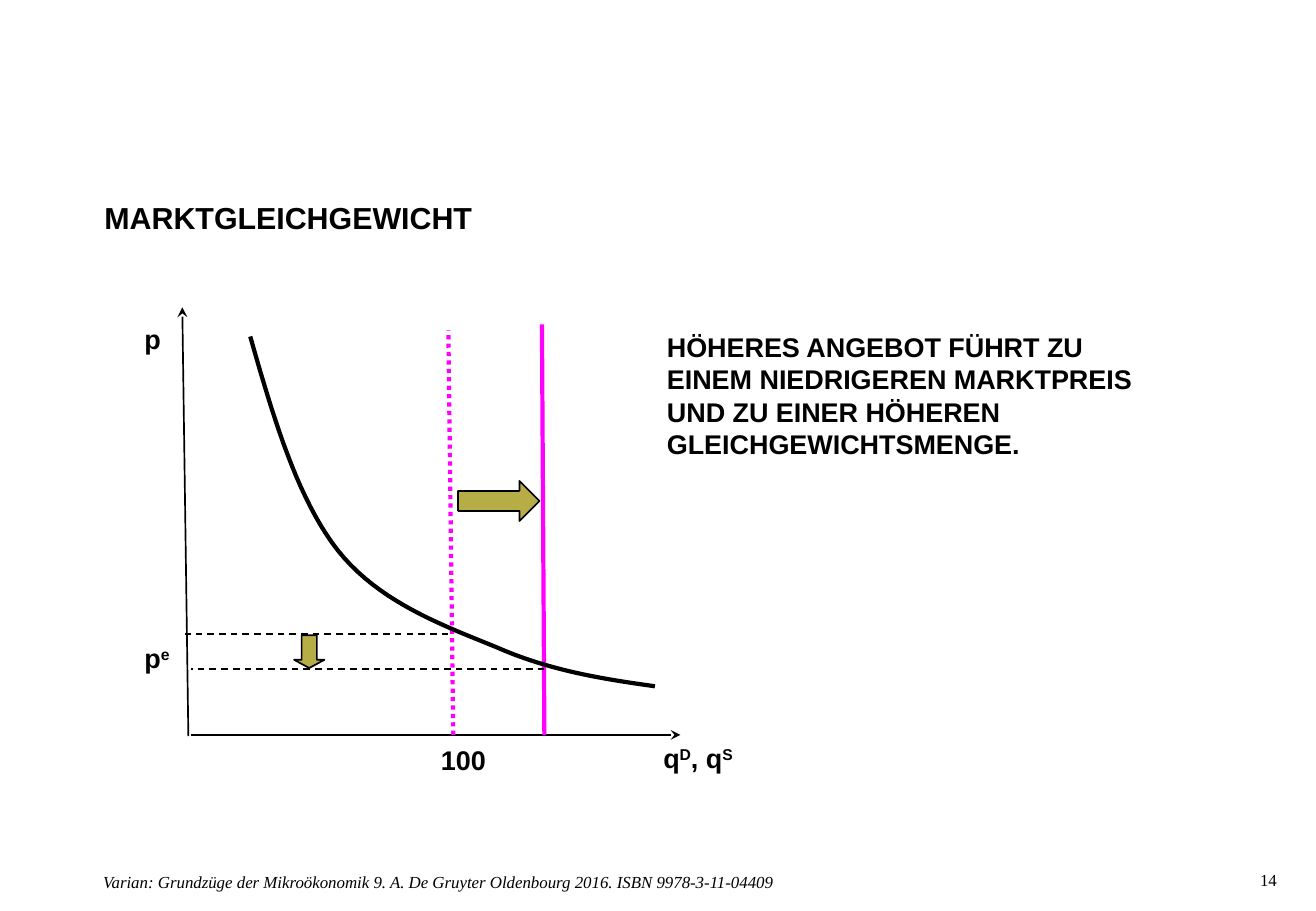
from lxml.etree import SubElement
from pptx import Presentation
from pptx.dml.color import RGBColor
from pptx.enum.dml import MSO_LINE
from pptx.enum.shapes import MSO_CONNECTOR, MSO_SHAPE
from pptx.enum.text import MSO_AUTO_SIZE
from pptx.oxml.ns import qn
from pptx.util import Inches, Pt

BLACK = RGBColor(0x00, 0x00, 0x00)
MAGENTA = RGBColor(0xFF, 0x00, 0xFF)
OLIVE = RGBColor(0xB7, 0xAD, 0x47)
COLS, ROWS = 108.3, 75
THIN, THICK = 1, 2.5
BASE_ROW = 60.5
OLD_PRICE, NEW_PRICE = 52.2, 55.1


class MarketSlide:
    sans = "Arial"
    serif = "Times New Roman"

    def __init__(self, prs):
        self.col = prs.slide_width / COLS
        self.row = prs.slide_height / ROWS
        self.s = prs.slides.add_slide(prs.slide_layouts[6])

    def place(self, *lengths):
        units = (self.col, self.row) * 2
        return [round(n * unit) for n, unit in zip(lengths, units)]

    def stroke(self, sp, color, width, dash=None):
        sp.line.color.rgb = color
        sp.line.width = Pt(width)
        if dash:
            sp.line.dash_style = dash

    def text(self, box, runs, size=16, font=sans, bold=True, italic=False,
             wrap=True, grow=True, insets=None):
        tf = self.s.shapes.add_textbox(*self.place(*box)).text_frame
        tf.word_wrap = wrap
        tf.auto_size = MSO_AUTO_SIZE.SHAPE_TO_FIT_TEXT if grow else MSO_AUTO_SIZE.NONE
        if insets:
            tf.margin_left, tf.margin_top, tf.margin_right, tf.margin_bottom = map(Inches, insets)
        p = tf.paragraphs[0]
        for words, raised in runs:
            for i, part in enumerate(words.split("\n")):
                if i:
                    p.add_line_break()
                r = p.add_run()
                r.text = part
                r.font.name = font
                r.font.size = Pt(size)
                r.font.bold = bold
                r.font.italic = italic
                r.font.color.rgb = BLACK
                if raised:
                    r.font._element.set("baseline", "30000")

    def line(self, start, end, color=BLACK, width=THIN, dash=None, arrow=False):
        cn = self.s.shapes.add_connector(
            MSO_CONNECTOR.STRAIGHT, *self.place(*start, *end))
        self.stroke(cn, color, width, dash)
        if arrow:
            SubElement(cn.line._get_or_add_ln(), qn("a:headEnd"), type="stealth")
        SubElement(cn._element.spPr, qn("a:effectLst"))

    def arrow(self, kind, box, head):
        sp = self.s.shapes.add_shape(kind, *self.place(*box))
        sp.shadow.inherit = False
        sp.adjustments[0] = 0.5
        sp.adjustments[1] = head
        sp.fill.solid()
        sp.fill.fore_color.rgb = OLIVE
        self.stroke(sp, BLACK, THIN)

    def curve(self, start, segments, steps=20):
        points = []
        p0 = start
        for p1, p2, p3 in segments:
            for i in range(1, steps + 1):
                t = i / steps
                u = 1 - t
                points.append(self.place(*(
                    u**3 * a + 3 * u * u * t * b + 3 * u * t * t * c + t**3 * d
                    for a, b, c, d in zip(p0, p1, p2, p3))))
            p0 = p3
        builder = self.s.shapes.build_freeform(*self.place(*start))
        builder.add_line_segments(points, close=False)
        sp = builder.convert_to_shape()
        sp.shadow.inherit = False
        sp.fill.background()
        self.stroke(sp, BLACK, THICK)


def main():
    prs = Presentation()
    prs.slide_width, prs.slide_height = Inches(10.83), Inches(7.5)
    market = MarketSlide(prs)

    market.text((8.6, 16.4, 95.1, 5.4), [("MARKTGLEICHGEWICHT", False)],
                size=18, grow=False, insets=(0, 0, 0.16, 0))
    footer = dict(size=10, font=market.serif, bold=False, grow=False, insets=(0, 0, 0, 0))
    market.text((103.7, 71.6, 3.9, 2), [("14", False)], **footer)
    market.text((8.5, 71.8, 94, 2), [(
        "Varian: Grundzüge der Mikroökonomik 9. A. De Gruyter Oldenbourg 2016. "
        "ISBN 9978-3-11-04409", False)], italic=True, **footer)

    market.line((15, 25.3), (15.5, 60.6), arrow=True)
    market.line((56, BASE_ROW), (15.7, BASE_ROW), arrow=True)
    market.line((44.8, BASE_ROW), (44.6, 26.7), MAGENTA, THICK)
    market.line((37.3, BASE_ROW), (36.9, 27.2), MAGENTA, THICK, MSO_LINE.ROUND_DOT)
    market.curve((20.6, 27.7), [
        ((22.5, 34.4), (24.5, 41.1), (27.8, 45.3)),
        ((31.2, 49.6), (36.5, 51.5), (40.9, 53.3)),
        ((45.2, 55.2), (49.6, 55.9), (53.9, 56.5))])
    market.arrow(MSO_SHAPE.RIGHT_ARROW, (37.7, 39.6, 6.7, 3.3), 0.5)
    market.line((44.8, NEW_PRICE), (15.7, NEW_PRICE), dash=MSO_LINE.DASH)
    market.line((36.9, OLD_PRICE), (15.2, OLD_PRICE), dash=MSO_LINE.DASH)
    market.arrow(MSO_SHAPE.DOWN_ARROW, (24.2, 52.3, 2.5, 2.7), 0.27)

    market.text((53.9, 26.7, 41.6, 11.8), [(
        "HÖHERES ANGEBOT FÜHRT ZU\nEINEM NIEDRIGEREN MARKTPREIS "
        "UND ZU EINER HÖHEREN GLEICHGEWICHTSMENGE.", False)])
    market.text((35.3, 60.7, 5.8, 3.7), [("100", False)], wrap=False)
    market.text((53.6, 60.6, 8.1, 3.7),
                [("q", False), ("D", True), (", q", False), ("S", True)], wrap=False)
    market.text((10.9, 52.3, 4.3, 3.7), [("p", False), ("e", True)])
    market.text((10.9, 26.1, 3.4, 3.7), [("p", False)], wrap=False)

    prs.save("out.pptx")


if __name__ == "__main__":
    main()
